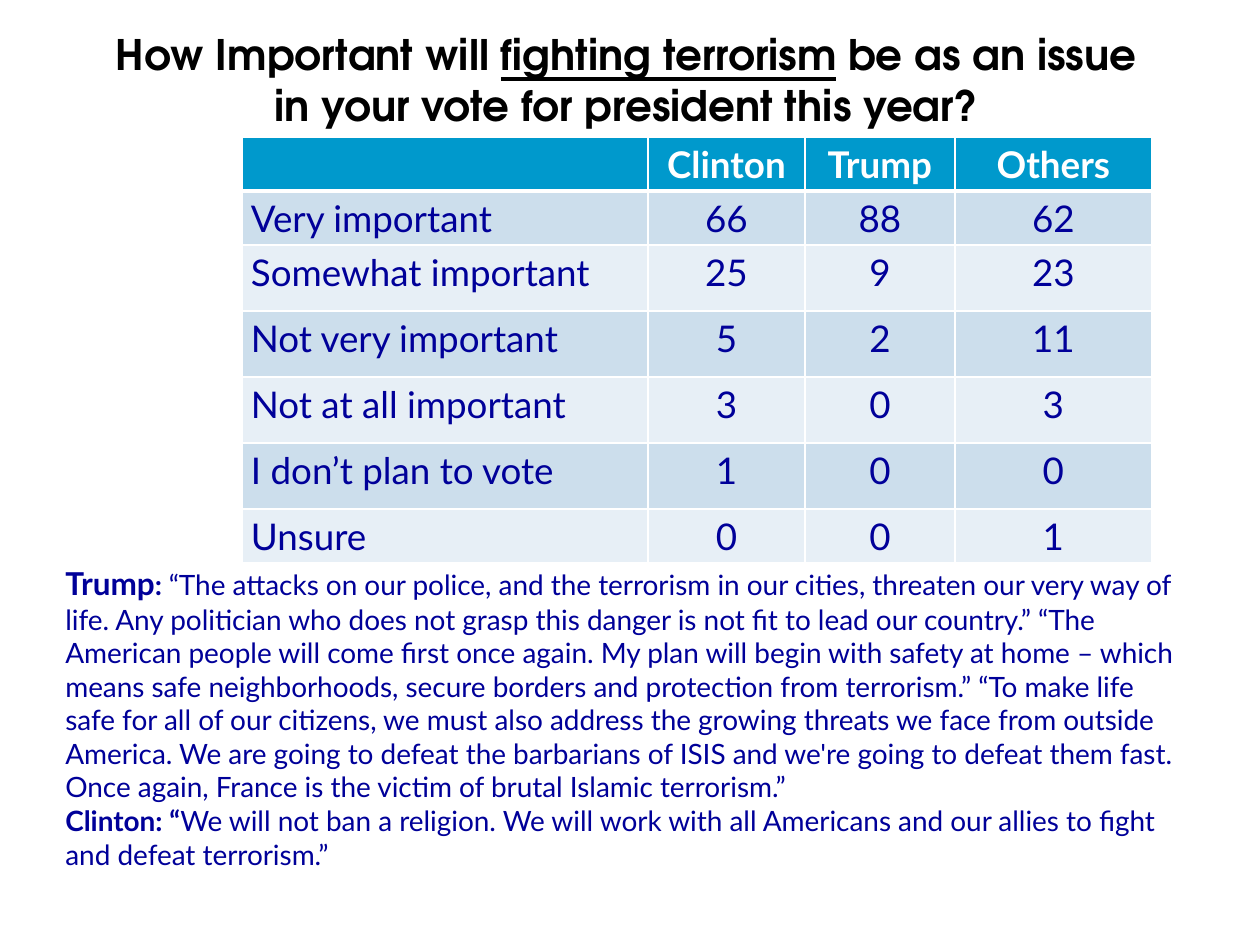
from lxml.etree import SubElement
from pptx import Presentation
from pptx.dml.color import RGBColor
from pptx.enum.text import MSO_ANCHOR, MSO_AUTO_SIZE, PP_ALIGN
from pptx.oxml.ns import qn
from pptx.util import Emu, Pt

# Content
TITLE = [
    ("How Important will ", False),
    ("fighting terrorism", True),
    (" be as an issue in your vote for president this year?", False),
]
ROWS = [
    ("", "Clinton", "Trump", "Others"),
    ("Very important", "66", "88", "62"),
    ("Somewhat important", "25", "9", "23"),
    ("Not very important", "5", "2", "11"),
    ("Not at all important", "3", "0", "3"),
    ("I don’t plan to vote", "1", "0", "0"),
    ("Unsure", "0", "0", "1"),
]
QUOTES = [  # runs: text, size, bold
    [("Trump", 18, True), (": ", 16, True),
     ("“The attacks on our police, and the terrorism in our cities, threaten our "
      "very way of life. Any politician who does not grasp this danger is not fit "
      "to lead our country.” “The American people will come first once again. My "
      "plan will begin with safety at home – which means safe neighborhoods, secure "
      "borders and protection from terrorism.” “To make life safe for all of our "
      "citizens, we must also address the growing threats we face from outside "
      "America. We are going to defeat the barbarians of ISIS and we're going to "
      "defeat them fast. Once again, France is the victim of brutal Islamic "
      "terrorism.”", 16, False)],
    [("Clinton: “", 16, True),
     ("We will not ban a religion. We will work with all Americans and our allies "
      "to fight and defeat terrorism.”", 16, False)],
]

# Look and layout
COLORS = {"title": "000000", "text": "000099", "head": "0099CC",
          "head_text": "FFFFFF", "band": "CCDEEC", "plain": "E7EFF6",
          "border": "FFFFFF"}
TITLE_FONT, BODY_FONT = "TeX Gyre Adventor", "Lato"
COL_W = [406, 157, 150, 197]
ROW_H = [53, 53, 66, 66, 66, 66, 53]


def px(n):
    return Emu(n * 914400 // 126)


def color(name):
    return RGBColor.from_string(COLORS[name])


def add_run(p, text, font, size, fill, bold=False, underline=False):
    r = p.add_run()
    r.text = text
    f = r.font
    f.name, f.size, f.bold, f.underline = font, Pt(size), bold, underline
    f.color.rgb = color(fill)


def add_borders(cell, **widths):
    tcPr = cell._tc.get_or_add_tcPr()
    for side in "LRTB":
        ln = SubElement(tcPr, qn(f"a:ln{side}"), w=str(Pt(widths.get(side, 1))))
        fill = SubElement(ln, qn("a:solidFill"))
        SubElement(fill, qn("a:srgbClr"), val=COLORS["border"])


prs = Presentation()
prs.slide_width, prs.slide_height = px(1260), px(945)
s = prs.slides.add_slide(prs.slide_layouts[5])

# Title
title = s.shapes.title
title.left, title.top, title.width, title.height = map(px, (83, 26, 1086, 110))
tf = title.text_frame
tf.auto_size, tf.vertical_anchor = MSO_AUTO_SIZE.NONE, MSO_ANCHOR.BOTTOM
p = tf.paragraphs[0]
p.alignment = PP_ALIGN.CENTER
for text, underline in TITLE:
    add_run(p, text, TITLE_FONT, 24, "title", True, underline)

# Poll table
table = s.shapes.add_table(len(ROWS), len(COL_W), px(242), px(137),
                           px(sum(COL_W)), px(sum(ROW_H))).table
table.horz_banding = False
for col, w in zip(table.columns, COL_W):
    col.width = px(w)
for i, (values, h) in enumerate(zip(ROWS, ROW_H)):
    table.rows[i].height = px(h)
    head = i == 0
    fill = "head" if head else "band" if i % 2 else "plain"
    for j, text in enumerate(values):
        cell = table.cell(i, j)
        cell.margin_left = cell.margin_right = px(9)
        cell.margin_top = cell.margin_bottom = px(5)
        add_borders(cell, B=3 if head else 1, T=3 if i == 1 else 1)
        cell.fill.solid()
        cell.fill.fore_color.rgb = color(fill)
        p = cell.text_frame.paragraphs[0]
        p.alignment = PP_ALIGN.CENTER if j else PP_ALIGN.LEFT
        if text:
            add_run(p, text, BODY_FONT, 21, "head_text" if head else "text", head)

# Candidate quotes
tf = s.shapes.add_textbox(px(53), px(558), px(1149), px(331)).text_frame
tf.word_wrap, tf.auto_size = True, MSO_AUTO_SIZE.SHAPE_TO_FIT_TEXT
for i, runs in enumerate(QUOTES):
    p = tf.add_paragraph() if i else tf.paragraphs[0]
    for text, size, bold in runs:
        add_run(p, text, BODY_FONT, size, "text", bold)

prs.save("out.pptx")
